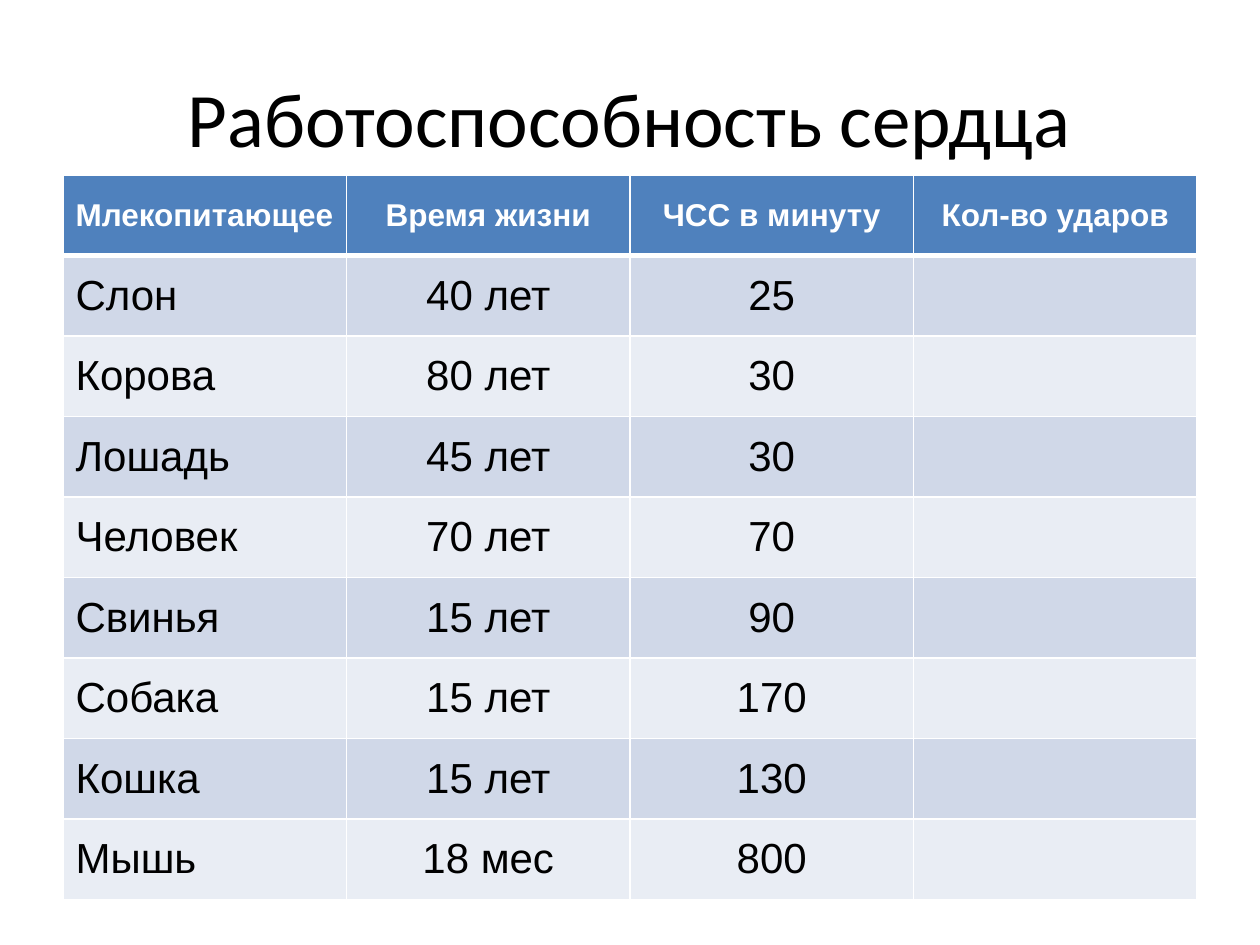
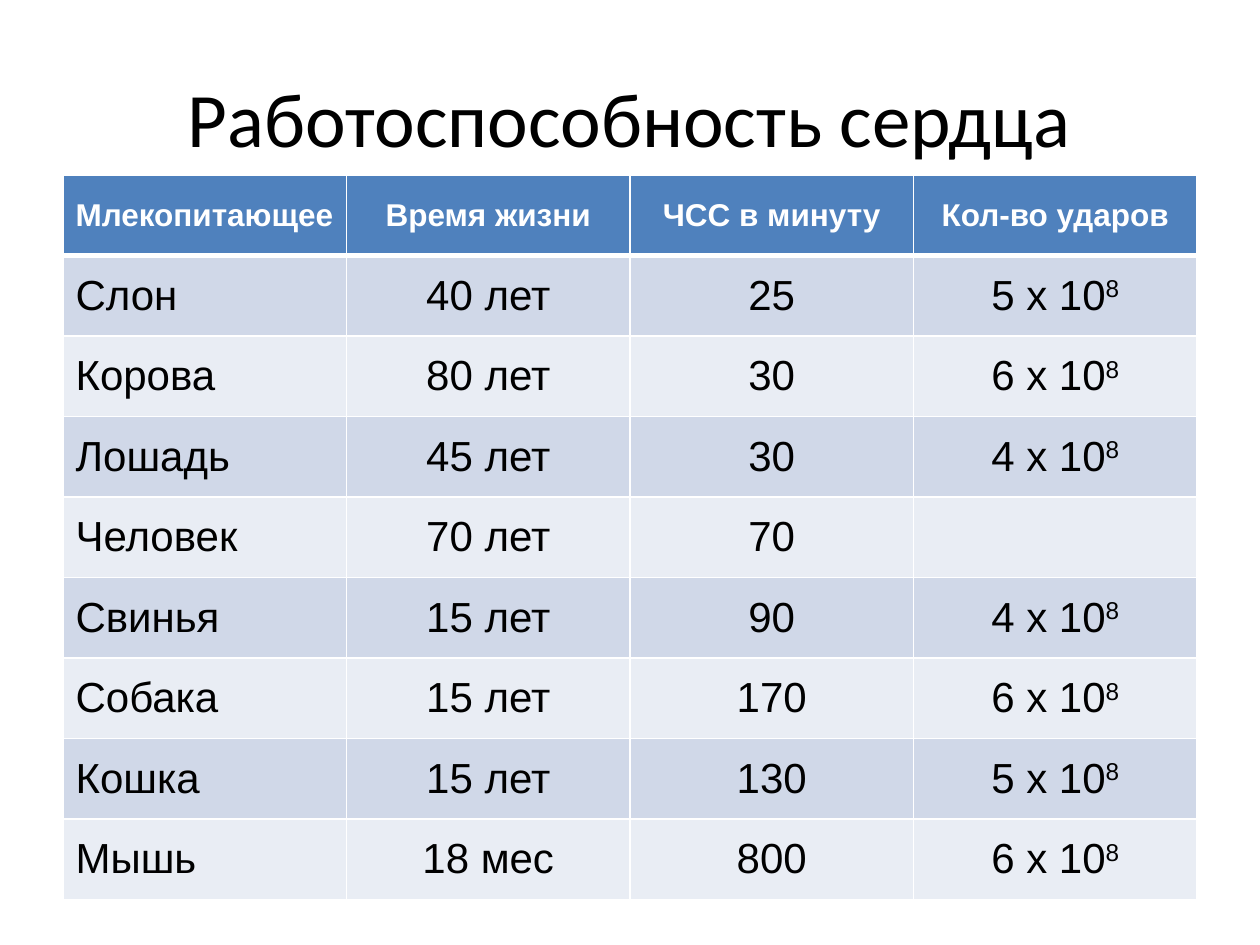
from lxml import etree
from pptx import Presentation
from pptx.dml.color import RGBColor
from pptx.enum.text import MSO_ANCHOR, PP_ALIGN
from pptx.oxml.ns import qn
from pptx.util import Cm, Pt

LEFT, CENTER = PP_ALIGN.LEFT, PP_ALIGN.CENTER
MIDDLE = MSO_ANCHOR.MIDDLE

WHITE, BLACK = "FFFFFF", "000000"
HEADER_FILL = "4F81BD"
BAND_FILLS = ("D0D8E8", "E9EDF4")
TITLE_FORMAT = {"name": "Calibri", "size": Pt(44), "bold": False}
HEADER_FORMAT = {"name": "Arial", "size": Pt(18), "bold": True}
BODY_FORMAT = {"name": "Arial", "size": Pt(24), "bold": False}

MARGIN, CONTENT_WIDTH = 1.27, 22.86
TABLE_TOP, TABLE_HEIGHT = 3.53, 14.6
THIN, THICK = Pt(1), Pt(3)

TITLE = "Работоспособность сердца"
HEADERS = ("Млекопитающее", "Время жизни", "ЧСС в минуту", "Кол-во ударов")
MAMMALS = (
    ("Слон", "40 лет", "25"),
    ("Корова", "80 лет", "30"),
    ("Лошадь", "45 лет", "30"),
    ("Человек", "70 лет", "70"),
    ("Свинья", "15 лет", "90"),
    ("Собака", "15 лет", "170"),
    ("Кошка", "15 лет", "130"),
    ("Мышь", "18 мес", "800"),
)
NO_BEATS = ("",) * len(MAMMALS)
BEATS = ("5 х 10^8", "6 х 10^8", "4 х 10^8", "", "4 х 10^8", "6 х 10^8", "5 х 10^8", "6 х 10^8")


def color(value):
    """Turn a hex string into a colour."""
    return RGBColor.from_string(value)


class Deck:
    """Hold the shared style and the current slide."""

    def __init__(self):
        """Start a presentation with 4:3 slides."""
        self.presentation = Presentation()
        self.presentation.slide_width = Cm(25.4)
        self.presentation.slide_height = Cm(19.05)
        self.slide = None

    def add_slide(self):
        """Add a blank white slide and make it current."""
        self.slide = self.presentation.slides.add_slide(self.presentation.slide_layouts[6])
        fill = self.slide.background.fill
        fill.solid()
        fill.fore_color.rgb = color(WHITE)

    def add_text(self, paragraph, text, font_format, text_color, alignment):
        """Add text to a paragraph, raising whatever follows a caret."""
        paragraph.alignment = alignment
        base, _, exponent = text.partition("^")
        for part, raised in ((base, False), (exponent, True)):
            if not part:
                continue
            run = paragraph.add_run()
            run.text = part
            for name, value in font_format.items():
                setattr(run.font, name, value)
            run.font.color.rgb = color(text_color)
            if raised:
                run._r.get_or_add_rPr().set("baseline", "30000")

    def add_title(self, text):
        """Add the centred slide title."""
        shape = self.slide.shapes.add_textbox(Cm(MARGIN), Cm(0.76), Cm(CONTENT_WIDTH), Cm(3.18))
        frame = shape.text_frame
        frame.word_wrap = True
        frame.vertical_anchor = MIDDLE
        self.add_text(frame.paragraphs[0], text, TITLE_FORMAT, BLACK, CENTER)

    def add_borders(self, cell, top, bottom):
        """Draw white borders around a cell."""
        properties = cell._tc.get_or_add_tcPr()
        for side, width in (("L", THIN), ("R", THIN), ("T", top), ("B", bottom)):
            line = etree.SubElement(properties, qn(f"a:ln{side}"), w=str(int(width)))
            fill = etree.SubElement(line, qn("a:solidFill"))
            etree.SubElement(fill, qn("a:srgbClr"), val=WHITE)

    def add_table(self, headers, records):
        """Add a banded table with a header row and equal rows and columns."""
        rows = [headers, *records]
        shape = self.slide.shapes.add_table(
            len(rows), len(headers), Cm(MARGIN), Cm(TABLE_TOP), Cm(CONTENT_WIDTH), Cm(TABLE_HEIGHT))
        table = shape.table
        for row_index, values in enumerate(rows):
            is_header = row_index == 0
            fill_color = HEADER_FILL if is_header else BAND_FILLS[(row_index - 1) % 2]
            font_format = HEADER_FORMAT if is_header else BODY_FORMAT
            text_color = WHITE if is_header else BLACK
            for column_index, text in enumerate(values):
                cell = table.cell(row_index, column_index)
                self.add_borders(cell, THICK if row_index == 1 else THIN, THICK if is_header else THIN)
                cell.fill.solid()
                cell.fill.fore_color.rgb = color(fill_color)
                cell.vertical_anchor = MIDDLE
                alignment = CENTER if column_index else LEFT
                self.add_text(cell.text_frame.paragraphs[0], text, font_format, text_color, alignment)


def main():
    """Build the table slide without and with the beat counts."""
    deck = Deck()
    for beats in (NO_BEATS, BEATS):
        deck.add_slide()
        deck.add_title(TITLE)
        deck.add_table(HEADERS, [(*mammal, count) for mammal, count in zip(MAMMALS, beats)])
    deck.presentation.save("out.pptx")


if __name__ == "__main__":
    main()
